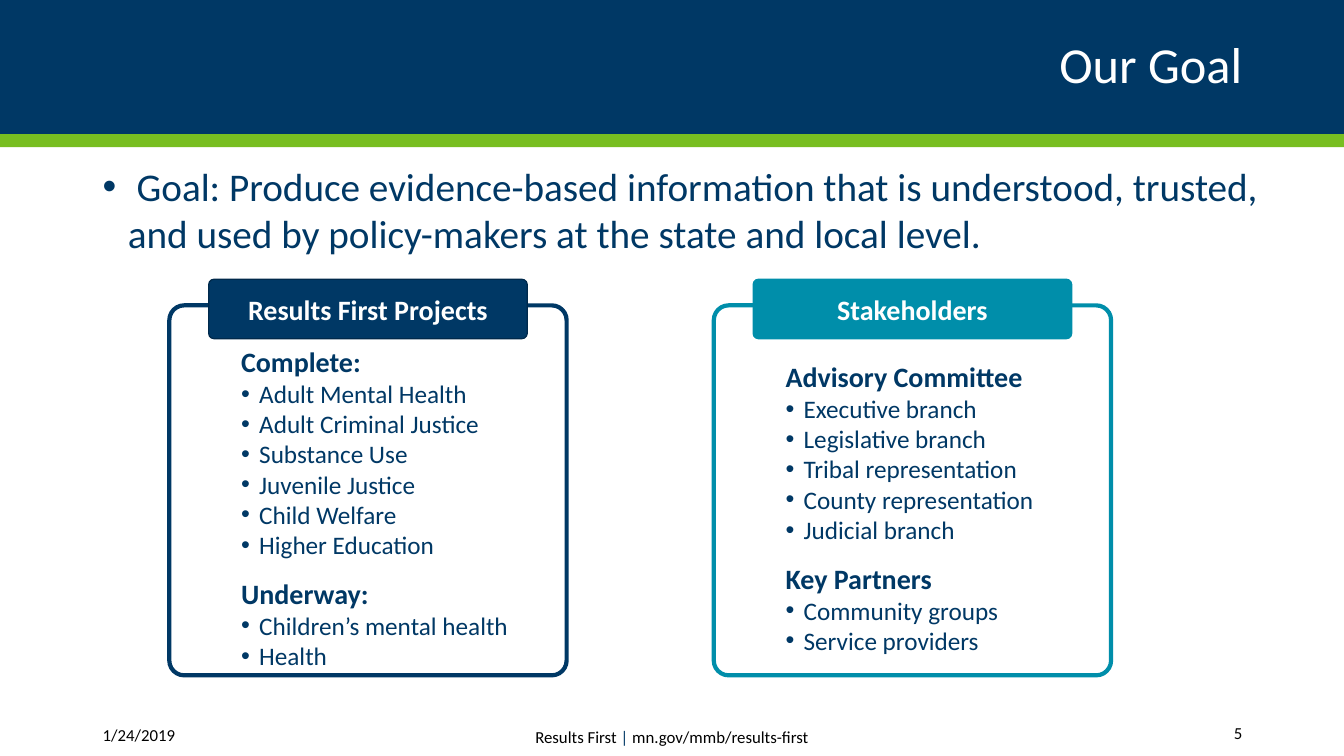
"""Builds the "Our Goal" slide with two cards for projects and stakeholders."""
import pptx
import pptx.util
import pptx.dml.color
import pptx.enum.shapes
import pptx.enum.text
import pptx.oxml.ns
import lxml.etree

PX = 9144
NAVY, GREEN, TEAL, WHITE, BLACK = "003865", "78BE21", "008EAA", "FFFFFF", "000000"
EDGE = "00294B"
SHAPE = pptx.enum.shapes.MSO_SHAPE
ALIGN = pptx.enum.text.PP_ALIGN
ANCHOR = pptx.enum.text.MSO_ANCHOR

TITLE = "Our Goal"
GOAL = (" Goal: Produce evidence-based information that is understood, trusted, "
        "and used by policy-makers at the state and local level.")
BANDS = [(0, 133, NAVY), (133, 13, GREEN)]
FOOTERS = [
    ((92, 709, 149, 40), ALIGN.LEFT, [("1/24/2019", BLACK)]),
    ((361, 711, 611, 40), ALIGN.CENTER,
     [("Results First\u2002".replace("\u2002", " "), BLACK), ("|", NAVY), (" mn.gov/mmb/results-first", BLACK)]),
    ((1082, 707, 160, 40), ALIGN.RIGHT, [("5", BLACK)]),
]
CARDS = [
    ("Results First Projects", NAVY, EDGE, [
        ("Complete:", ["Adult Mental Health", "Adult Criminal Justice", "Substance Use",
                       "Juvenile Justice", "Child Welfare", "Higher Education"]),
        ("Underway:", ["Children’s mental health", "Health"]),
    ]),
    ("Stakeholders", TEAL, TEAL, [
        ("Advisory Committee", ["Executive branch", "Legislative branch", "Tribal representation",
                                "County representation", "Judicial branch"]),
        ("Key Partners", ["Community groups", "Service providers"]),
    ]),
]
CARD_LEFT, CARD_TOP, CARD_W, CARD_H, CARD_STEP = 168, 303, 394, 367, 540
TAB_DX, TAB_TOP, TAB_W, TAB_H = 39, 277, 316, 59
HEAD_INDENT, ITEM_MARGIN, ITEM_HANG = 57, 75, -18
BODY_TOP_INSET = 39


def color(value):
    return pptx.dml.color.RGBColor.from_string(value)


def box(at):
    return [n * PX for n in at]


def add_text(tf, runs, size=18, fill=NAVY, bold=False, align=ALIGN.LEFT, spacing=None,
             gap=0, margin=0, indent=0, bullet=False):
    p = tf.paragraphs[0]
    if p.runs:
        p = tf.add_paragraph()
    p.alignment = align
    p.space_before = p.space_after = pptx.util.Pt(gap)
    if spacing:
        p.line_spacing = spacing
    pr = p._p.get_or_add_pPr()
    pr.set("marL", str(margin * PX))
    pr.set("indent", str(indent * PX))
    if bullet:
        font = lxml.etree.SubElement(pr, pptx.oxml.ns.qn("a:buFont"))
        font.set("typeface", "Arial")
        lxml.etree.SubElement(pr, pptx.oxml.ns.qn("a:buChar")).set("char", "•")
    for text, tint in [(runs, fill)] if isinstance(runs, str) else runs:
        r = p.add_run()
        r.text = text
        r.font.name = "Calibri"
        r.font.size = pptx.util.Pt(size)
        r.font.bold = bold
        r.font.color.rgb = color(tint)


def add_box(s, at, fill, line=None, width=0, kind=SHAPE.RECTANGLE, radius=None):
    sp = s.shapes.add_shape(kind, *box(at))
    sp.shadow.inherit = False
    sp.fill.solid()
    sp.fill.fore_color.rgb = color(fill)
    if line:
        sp.line.color.rgb = color(line)
        sp.line.width = pptx.util.Pt(width)
    else:
        sp.line.fill.background()
    if radius:
        sp.adjustments[0] = radius
    sp.text_frame.word_wrap = True
    sp.text_frame.vertical_anchor = ANCHOR.MIDDLE
    return sp


def add_label(s, at, runs, anchor=ANCHOR.MIDDLE, **style):
    tf = s.shapes.add_textbox(*box(at)).text_frame
    tf.word_wrap = True
    tf.vertical_anchor = anchor
    add_text(tf, runs, **style)


def add_card(s, left, heading, fill, edge, groups):
    sp = add_box(s, (left, CARD_TOP, CARD_W, CARD_H), WHITE, fill, 3, SHAPE.ROUNDED_RECTANGLE, 0.04)
    tf = sp.text_frame
    tf.margin_top = BODY_TOP_INSET * PX
    for i, (name, items) in enumerate(groups):
        add_text(tf, name, size=20, bold=True, indent=HEAD_INDENT, spacing=1.5 if i else None)
        for item in items:
            add_text(tf, item, margin=ITEM_MARGIN, indent=ITEM_HANG, bullet=True)
    tab = add_box(s, (left + TAB_DX, TAB_TOP, TAB_W, TAB_H), fill, edge, 0.85,
                  SHAPE.ROUNDED_RECTANGLE, 0.09)
    add_text(tab.text_frame, heading, size=20, fill=WHITE, bold=True, align=ALIGN.CENTER)


def main():
    prs = pptx.Presentation()
    prs.slide_width, prs.slide_height = box((1333, 750))
    s = prs.slides.add_slide(prs.slide_layouts[6])
    for top, height, fill in BANDS:
        add_box(s, (0, top, 1333, height), fill)
    add_label(s, (92, 17, 1150, 100), TITLE, size=36, fill=WHITE, align=ALIGN.RIGHT, spacing=0.9)
    add_label(s, (92, 156, 1194, 121), GOAL, ANCHOR.TOP, size=28, gap=10,
              margin=25, indent=-25, bullet=True)
    for at, align, runs in FOOTERS:
        add_label(s, at, runs, size=12, align=align)
    for i, card in enumerate(CARDS):
        add_card(s, CARD_LEFT + i * CARD_STEP, *card)
    prs.save("out.pptx")


if __name__ == "__main__":
    main()
